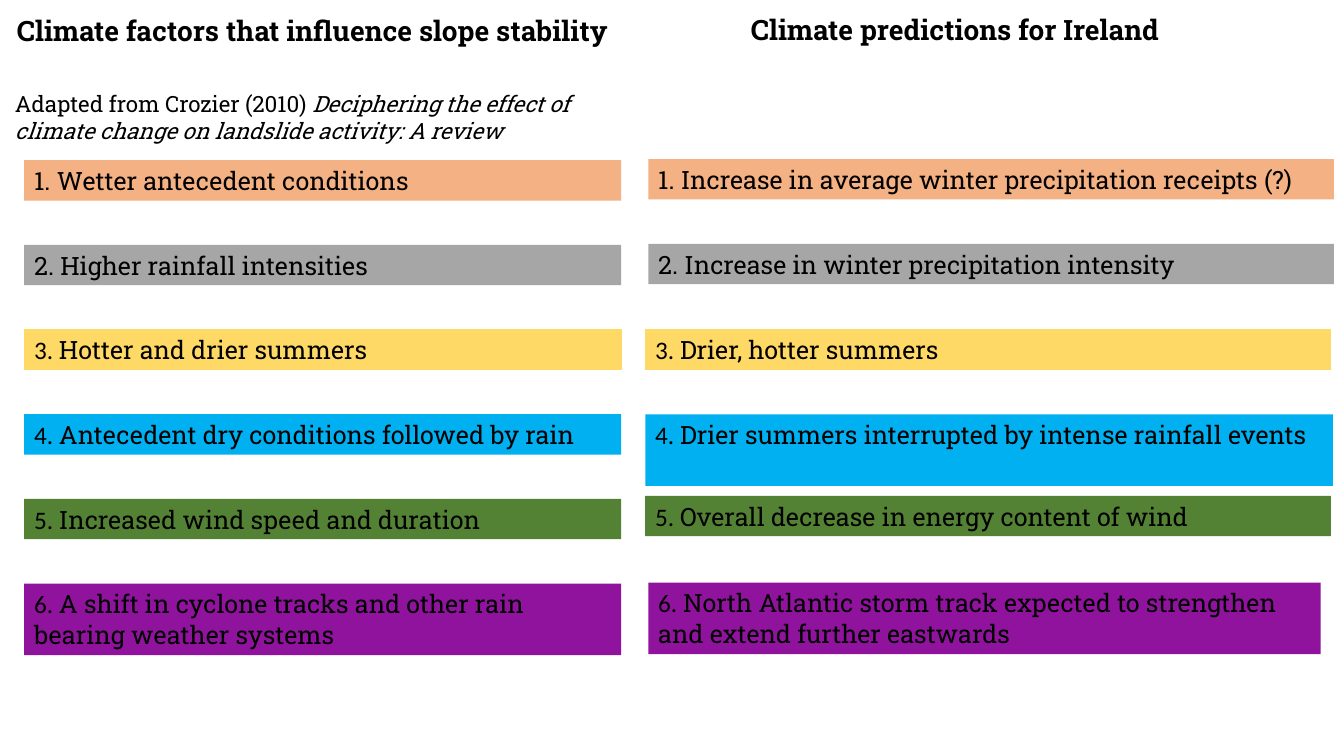
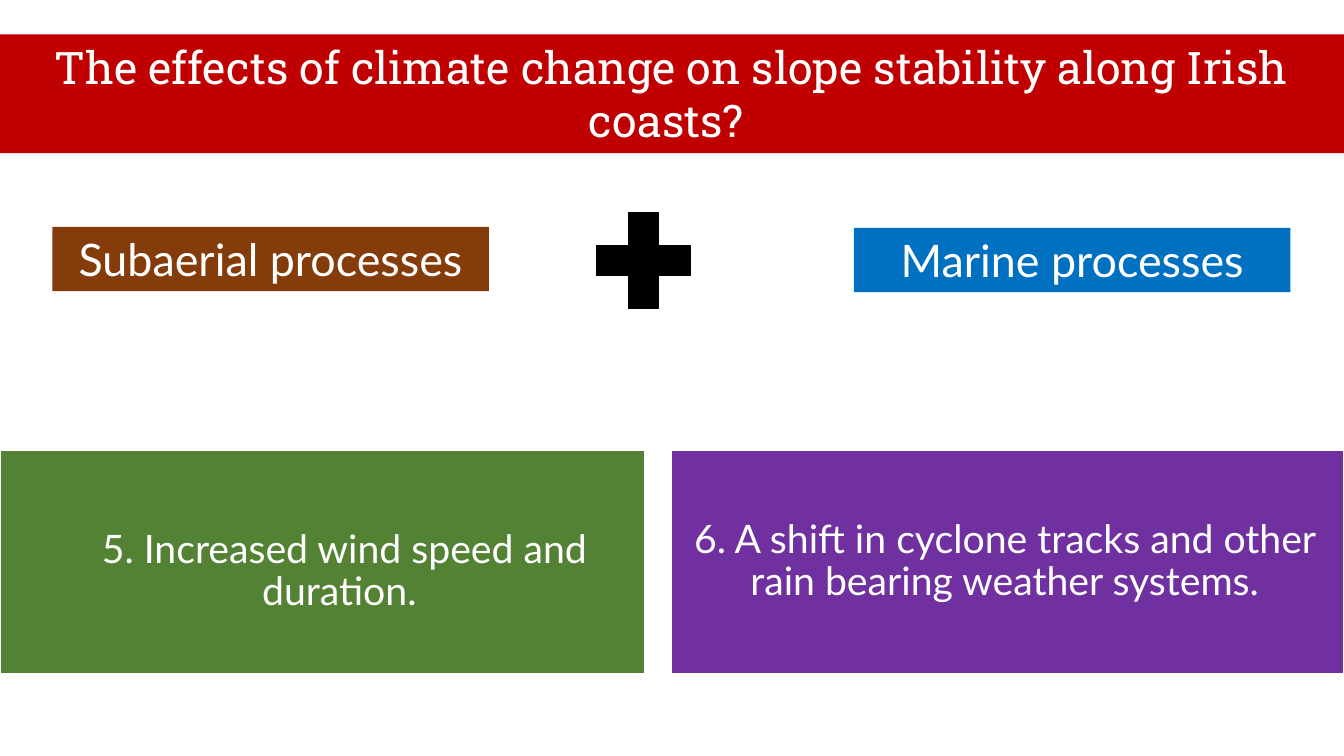
from dataclasses import dataclass

from pptx import Presentation
from pptx.dml.color import RGBColor
from pptx.enum.shapes import MSO_SHAPE as Shape
from pptx.enum.text import MSO_ANCHOR as Anchor, MSO_AUTO_SIZE as AutoSize, PP_ALIGN as Align
from pptx.util import Inches, Pt


@dataclass(frozen=True)
class Theme:
    slab: str = "Roboto Slab"
    sans: str = "Lato"
    digits: str = "Calibri"
    ink: str = "000000"
    paper: str = "FFFFFF"
    orange: str = "F4B183"
    grey: str = "A6A6A6"
    yellow: str = "FFD966"
    sky: str = "00B0F0"
    green: str = "548235"
    magenta: str = "90139D"
    violet: str = "7030A0"
    red: str = "C00000"
    brown: str = "843C0B"
    blue: str = "0070C0"
    source: int = 16
    factor: int = 18
    heading: int = 20
    panel: int = 28
    banner: int = 32


THEME = Theme()
WIDTH, HEIGHT = 13.33, 7.5
INSETS = (0.1, 0.05, 0.1, 0.05)

HEADINGS = ("Climate factors that influence slope stability", "Climate predictions for Ireland")
CITATION = ("Adapted from Crozier (2010) ",
            "Deciphering the effect of climate change on landslide activity: A review")
FACTORS = [
    ("Wetter antecedent conditions", THEME.orange, THEME.slab, 0.4),
    ("Higher rainfall intensities", THEME.grey, THEME.slab, 0.4),
    ("Hotter and drier summers", THEME.yellow, THEME.digits, 0.4),
    ("Antecedent dry conditions followed by rain", THEME.sky, THEME.digits, 0.4),
    ("Increased wind speed and duration", THEME.green, THEME.digits, 0.4),
    ("A shift in cyclone tracks and other rain bearing weather systems",
     THEME.magenta, THEME.digits, 0.71),
]
PREDICTIONS = [
    ("Increase in average winter precipitation receipts (?)", (6.43, 1.58, 6.8, 0.4)),
    ("Increase in winter precipitation intensity", (6.43, 2.42, 6.8, 0.4)),
    ("Drier, hotter summers", (6.4, 3.27, 6.8, 0.4)),
    ("Drier summers interrupted by intense rainfall events", (6.4, 4.11, 6.82, 0.71)),
    ("Overall decrease in energy content of wind", (6.4, 4.92, 6.8, 0.4)),
    ("North Atlantic storm track expected to strengthen and extend further eastwards",
     (6.43, 5.78, 6.67, 0.71)),
]
FACTOR_LEFT, FACTOR_TOP, FACTOR_WIDTH, FACTOR_PITCH = 0.24, 1.59, 5.92, 0.84

QUESTION = "The effects of climate change on slope stability along Irish coasts? "
PROCESSES = [
    ("Subaerial processes", THEME.brown, (0.52, 2.25, 4.33, 0.64)),
    ("Marine processes", THEME.blue, (8.47, 2.26, 4.33, 0.64)),
]
PLUS_PLACE = (5.75, 1.94, 1.26, 1.29)
PANELS = [
    ("5. Increased wind speed and duration. ", THEME.green,
     (0, 4.47, 6.39, 2.21), (0.56, 0.32, 0.12, 0.12)),
    ("6. A shift in cyclone tracks and other rain bearing weather systems.", THEME.violet,
     (6.66, 4.47, 6.67, 2.21), (0.12, 0.12, 0.18, 0.12)),
]


def rgb(colour):
    return RGBColor.from_string(colour)


def place(shape, at):
    shape.left, shape.top, shape.width, shape.height = map(Inches, at)


def write(shape, parts, size, fonts, colour=THEME.ink, align=Align.LEFT,
          anchor=Anchor.TOP, insets=INSETS, spacing=1.0):
    frame = shape.text_frame
    frame.word_wrap = True
    frame.auto_size = AutoSize.NONE
    frame.vertical_anchor = anchor
    frame.margin_left, frame.margin_top, frame.margin_right, frame.margin_bottom = map(Inches, insets)
    para = frame.paragraphs[0]
    para.alignment = align
    para.line_spacing = spacing
    for text, font in zip(parts, fonts):
        span = para.add_run()
        span.text = text
        span.font.name = font
        span.font.size = Pt(size)
        span.font.color.rgb = rgb(colour)
    return para


def add_block(page, at, fill, line=None, line_width=0.75, preset=Shape.RECTANGLE):
    block = page.shapes.add_shape(preset, *map(Inches, at))
    block.shadow.inherit = False
    block.fill.solid()
    block.fill.fore_color.rgb = rgb(fill)
    if line:
        block.line.color.rgb = rgb(line)
        block.line.width = Pt(line_width)
    else:
        block.line.fill.background()
    return block


def add_page(deck, title_at):
    page = deck.slides.add_slide(deck.slide_layouts[5])
    place(page.shapes.title, title_at)
    return page


def add_entry(page, number, text, fill, number_font, at):
    line = fill if fill == THEME.yellow else None
    block = add_block(page, at, fill, line)
    write(block, (f"{number}. ", text), THEME.factor, (number_font, THEME.slab))


def build_comparison(deck):
    page = add_page(deck, (0.05, 0.08, 6.1, 0.77))
    right_heading = page.shapes.add_textbox(*map(Inches, (7.35, 0.07, 5.98, 0.44)))
    headings = ((page.shapes.title, Align.CENTER), (right_heading, Align.LEFT))
    for text, (box, align) in zip(HEADINGS, headings):
        para = write(box, (text,), THEME.heading, (THEME.slab,), align=align)
        para.runs[0].font.bold = True

    citation = page.shapes.add_textbox(*map(Inches, (0.05, 0.85, 5.75, 0.64)))
    para = write(citation, CITATION, THEME.source, (THEME.slab, THEME.slab))
    para.runs[1].font.italic = True

    for index, (factor, prediction) in enumerate(zip(FACTORS, PREDICTIONS)):
        text, fill, number_font, height = factor
        top = FACTOR_TOP + index * FACTOR_PITCH
        factor_at = (FACTOR_LEFT, top, FACTOR_WIDTH, height)
        for entry, at in ((text, factor_at), prediction):
            add_entry(page, index + 1, entry, fill, number_font, at)


def build_question(deck):
    page = add_page(deck, (0, 0.34, WIDTH, 1.18))
    banner = page.shapes.title
    banner.fill.solid()
    banner.fill.fore_color.rgb = rgb(THEME.red)
    write(banner, (QUESTION,), THEME.banner, (THEME.slab,), THEME.paper, Align.CENTER)

    for text, fill, at in PROCESSES:
        label = add_block(page, at, fill)
        write(label, (text,), THEME.banner, (THEME.sans,), THEME.paper, Align.CENTER)
    add_block(page, PLUS_PLACE, THEME.ink, THEME.ink, 1, Shape.MATH_PLUS)

    for text, fill, at, insets in PANELS:
        panel = add_block(page, at, fill, THEME.paper, 1)
        write(panel, (text,), THEME.panel, (THEME.sans,), THEME.paper, Align.CENTER,
              Anchor.MIDDLE, insets, 0.9)


def main():
    deck = Presentation()
    deck.slide_width, deck.slide_height = Inches(WIDTH), Inches(HEIGHT)
    build_comparison(deck)
    build_question(deck)
    deck.save("out.pptx")


if __name__ == "__main__":
    main()
